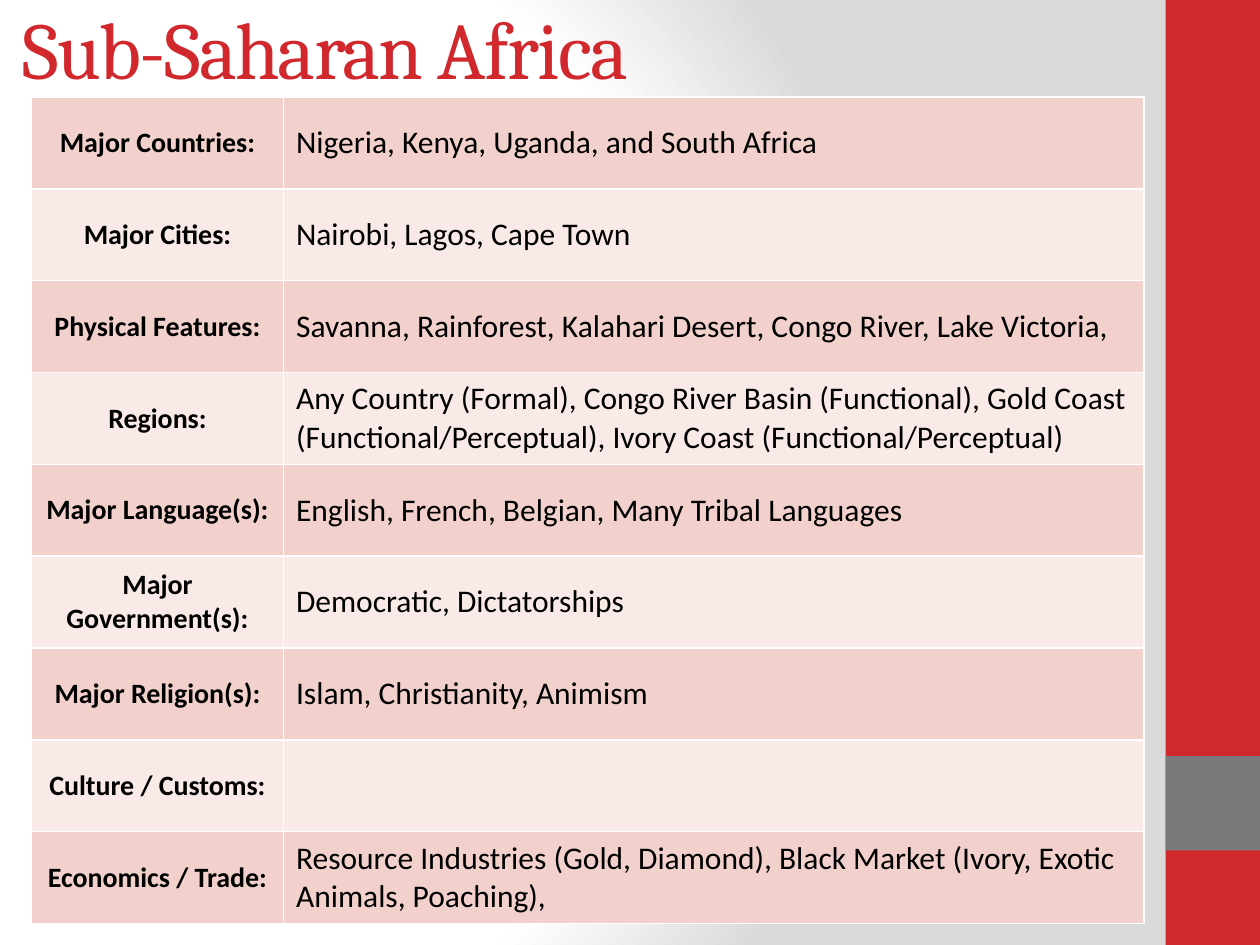
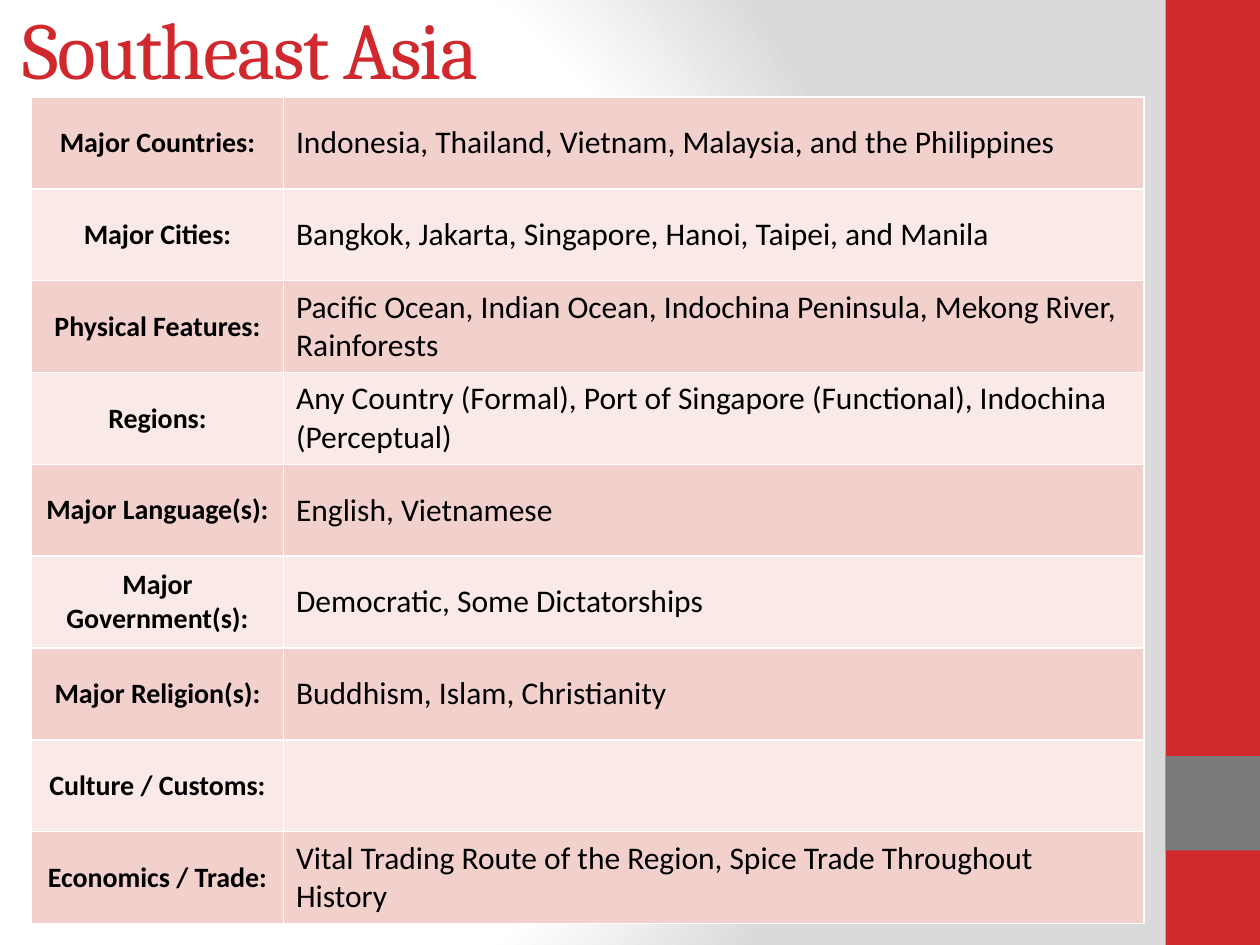
from lxml import etree
from pptx import Presentation
from pptx.dml.color import RGBColor
from pptx.enum.shapes import MSO_SHAPE as Shape
from pptx.enum.text import MSO_ANCHOR as Anchor, MSO_AUTO_SIZE as AutoSize, PP_ALIGN as Align
from pptx.oxml import parse_xml
from pptx.oxml.ns import nsdecls, qn
from pptx.util import Inches, Pt

TOPICS = [
    "Major Countries:", "Major Cities:", "Physical Features:", "Regions:",
    "Major Language(s):", "Major Government(s):", "Major Religion(s):",
    "Culture / Customs:", "Economics / Trade:",
]

# One answer for each topic, in the same order.
REGIONS = {
    "Sub-Saharan Africa": [
        "Nigeria, Kenya, Uganda, and South Africa",
        "Nairobi, Lagos, Cape Town",
        "Savanna, Rainforest, Kalahari Desert, Congo River, Lake Victoria,",
        "Any Country (Formal), Congo River Basin (Functional), Gold Coast "
        "(Functional/Perceptual), Ivory Coast (Functional/Perceptual)",
        "English, French, Belgian, Many Tribal Languages",
        "Democratic, Dictatorships",
        "Islam, Christianity, Animism",
        "",
        "Resource Industries (Gold, Diamond), Black Market (Ivory, Exotic "
        "Animals, Poaching),",
    ],
    "Southeast Asia": [
        "Indonesia, Thailand, Vietnam, Malaysia, and the Philippines",
        "Bangkok, Jakarta, Singapore, Hanoi, Taipei, and Manila",
        "Pacific Ocean, Indian Ocean, Indochina Peninsula, Mekong River, Rainforests",
        "Any Country (Formal), Port of Singapore (Functional), Indochina (Perceptual)",
        "English, Vietnamese",
        "Democratic, Some Dictatorships",
        "Buddhism, Islam, Christianity",
        "",
        "Vital Trading Route of the Region, Spice Trade Throughout History",
    ],
}

COLORS = {
    "red": "D1282E", "gray": "7A7A7A", "white": "FFFFFF", "edge": "DADADA",
    "black": "000000", "dark row": "F2D1CD", "light row": "F9EAE8",
}
TITLE_FONT, BODY_FONT = "Cambria", "Calibri"

SLIDE_WIDTH, SLIDE_HEIGHT = 10, 7.5
BAND_WIDTH = BLOCK_HEIGHT = SLIDE_HEIGHT / 10
BAND_LEFT = SLIDE_WIDTH - BAND_WIDTH
BANDS = [  # color, top, height
    ("red", 0, SLIDE_HEIGHT),
    ("gray", SLIDE_HEIGHT * 0.8, BLOCK_HEIGHT),
]
TITLE_BOX = (0.08, -0.25, 8.33, 1.25)
TABLE_LEFT, TABLE_TOP, TABLE_HEIGHT = 0.25, 0.77, 6.56
COLUMN_WIDTHS = (2, 6.83)


def color(name):
    return RGBColor.from_string(COLORS[name])


def inches(*lengths):
    return [Inches(length) for length in lengths]


def write(frame, text, *, font=BODY_FONT, size=18, ink="black", bold=False,
          align=Align.LEFT, spacing=None):
    paragraph = frame.paragraphs[0]
    paragraph.alignment = align
    paragraph.font.size = Pt(size)
    if not text:
        return
    run = paragraph.add_run()
    run.text = text
    run.font.name, run.font.size, run.font.bold = font, Pt(size), bold
    run.font.color.rgb = color(ink)
    if spacing is not None:
        run.font._element.set("spc", str(spacing * 100))


def set_background(master):
    """Give the master a round gradient, white on the left and gray on the right."""
    master.background.fill.solid()
    properties = master.element.find(".//" + qn("p:bgPr"))
    stops = "".join(
        f'<a:gs pos="{share * 1000}"><a:srgbClr val="{COLORS[name]}"/></a:gs>'
        for share, name in ((0, "white"), (75, "white"), (100, "edge")))
    properties.replace(properties[0], parse_xml(
        f'<a:gradFill {nsdecls("a")} rotWithShape="1"><a:gsLst>{stops}</a:gsLst>'
        '<a:path path="circle"><a:fillToRect l="20000" t="50000" r="100000" b="50000"/>'
        '</a:path></a:gradFill>'))


def move_bands_to_master(slide, master):
    """Draw the side bands on a slide, then hand them to the master for all slides."""
    for number, (name, top, height) in enumerate(BANDS):
        band = slide.shapes.add_shape(
            Shape.RECTANGLE, *inches(BAND_LEFT, top, BAND_WIDTH, height))
        band.shadow.inherit = False
        band.fill.solid()
        band.fill.fore_color.rgb = color(name)
        band.line.fill.background()
        band.element.nvSpPr.cNvPr.id = 100 + number
        master.shapes.element.append(band.element)


def add_title(slide, text):
    title = slide.shapes.title
    title.left, title.top, title.width, title.height = inches(*TITLE_BOX)
    frame = title.text_frame
    frame.vertical_anchor = Anchor.MIDDLE
    frame.auto_size = AutoSize.NONE
    write(frame, text, font=TITLE_FONT, size=46, ink="red", spacing=-1)


def set_borders(cell):
    properties = cell._tc.get_or_add_tcPr()
    for side in ("lnL", "lnR", "lnT", "lnB"):
        line = etree.SubElement(properties, qn(f"a:{side}"), w=str(Pt(1)))
        fill = etree.SubElement(line, qn("a:solidFill"))
        etree.SubElement(fill, qn("a:srgbClr"), val=COLORS["white"])


def add_fact_table(slide, answers):
    table = slide.shapes.add_table(
        len(TOPICS), len(COLUMN_WIDTHS),
        *inches(TABLE_LEFT, TABLE_TOP, sum(COLUMN_WIDTHS), TABLE_HEIGHT)).table
    table.first_row = table.horz_banding = False
    for column, width in zip(table.columns, COLUMN_WIDTHS):
        column.width = Inches(width)
    for index, (row, topic, answer) in enumerate(zip(table.rows, TOPICS, answers)):
        topic_cell, answer_cell = row.cells
        write(topic_cell.text_frame, topic, size=16, bold=True, align=Align.CENTER)
        write(answer_cell.text_frame, answer)
        for cell in row.cells:
            cell.vertical_anchor = Anchor.MIDDLE
            set_borders(cell)
            cell.fill.solid()
            cell.fill.fore_color.rgb = color("light row" if index % 2 else "dark row")


def main():
    presentation = Presentation()
    presentation.slide_width, presentation.slide_height = inches(SLIDE_WIDTH, SLIDE_HEIGHT)
    master = presentation.slide_master
    title_only = presentation.slide_layouts.get_by_name("Title Only")
    set_background(master)
    for region, answers in REGIONS.items():
        slide = presentation.slides.add_slide(title_only)
        add_title(slide, region)
        add_fact_table(slide, answers)
    move_bands_to_master(slide, master)
    presentation.save("out.pptx")


if __name__ == "__main__":
    main()
